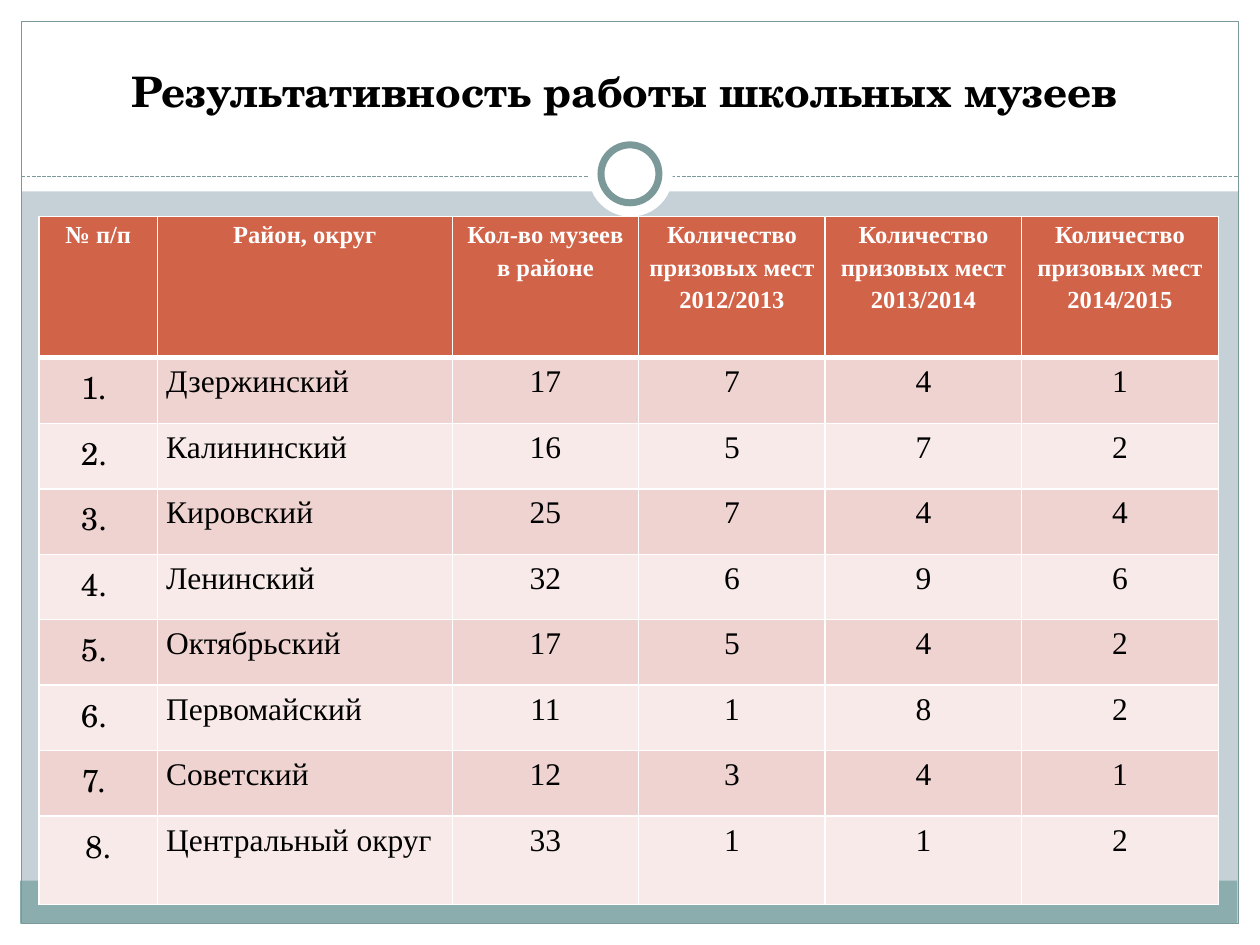
from lxml.etree import SubElement
from pptx import Presentation
from pptx.dml.color import RGBColor
from pptx.enum.dml import MSO_LINE_DASH_STYLE as Dash
from pptx.enum.shapes import MSO_CONNECTOR as Connector, MSO_SHAPE as Shape
from pptx.enum.text import MSO_AUTO_SIZE as AutoSize, PP_ALIGN as Align
from pptx.oxml.ns import qn
from pptx.util import Inches, Pt

COLORS = {
    "background": "C5D1D7", "white": "FFFFFF", "black": "000000", "band": "8CADAE",
    "frame": "7C999A", "header": "D16349", "odd": "EED3D0", "even": "F7EAE9",
}
SERIF, SCHOOL = "Times New Roman", "TeX Gyre Schola"
HEADER_FORMAT = {"size": Pt(14), "name": SERIF, "bold": True}
BODY_FORMAT = {"size": Pt(18), "name": SERIF, "bold": False}
NUMBER_FORMAT = {**BODY_FORMAT, "name": SCHOOL}
TITLE_FORMAT = {"size": Pt(24), "name": SCHOOL, "bold": True}
CELL_MARGINS = {"margin_left": Inches(0.07), "margin_right": Inches(0.07),
                "margin_top": 0, "margin_bottom": 0}
COLUMN_WIDTHS = [0.94, 2.34, 1.48, 1.48, 1.56, 1.56]
ROW_HEIGHTS = [1.12] + [0.52] * 7 + [0.7]
YEARS = ["2012/2013", "2013/2014", "2014/2015"]
HEADERS = ["№ п/п", "Район, округ", "Кол-во музеев в районе"] + [
    f"Количество призовых мест\n{year}" for year in YEARS]
DISTRICTS = [
    ("1. ", "Дзержинский", 17, 7, 4, 1),
    ("2. ", "Калининский", 16, 5, 7, 2),
    ("3. ", "Кировский", 25, 7, 4, 4),
    ("4. ", "Ленинский", 32, 6, 9, 6),
    ("5. ", "Октябрьский", 17, 5, 4, 2),
    ("6. ", "Первомайский", 11, 1, 8, 2),
    ("7. ", "Советский", 12, 3, 4, 1),
    ("8.", "Центральный округ", 33, 1, 1, 2),
]


def color(name):
    """Return the palette colour with this name."""
    return RGBColor.from_string(COLORS[name])


def set_values(target, values):
    """Set each attribute of the target from a dict."""
    for name, value in values.items():
        setattr(target, name, value)


def format_text(text_frame, text, values, font_color, **paragraph_values):
    """Write the text and format all its paragraphs and runs."""
    text_frame.text = text
    for paragraph in text_frame.paragraphs:
        set_values(paragraph, paragraph_values)
        for run in paragraph.runs:
            set_values(run.font, values)
            run.font.color.rgb = color(font_color)


def add_panel(slide, kind, box, fill=None, line=None, width=0.75):
    """Add a plain shape with an optional fill and outline."""
    shape = slide.shapes.add_shape(kind, *map(Inches, box))
    shape.shadow.inherit = False
    if fill:
        shape.fill.solid()
        shape.fill.fore_color.rgb = color(fill)
    else:
        shape.fill.background()
    if line:
        shape.line.color.rgb = color(line)
        shape.line.width = Pt(width)
    else:
        shape.line.fill.background()


def add_dashed_rule(slide, left, right, top):
    """Add the dashed horizontal rule under the title."""
    rule = slide.shapes.add_connector(
        Connector.STRAIGHT, Inches(left), Inches(top), Inches(right), Inches(top))
    set_values(rule.line, {"width": Pt(0.75), "dash_style": Dash.SQUARE_DOT})
    rule.line.color.rgb = color("frame")
    SubElement(rule.element.spPr, qn("a:effectLst"))


def add_frame(slide):
    """Add the margins, frame, rule and ring around the content."""
    for box in [(0, 7.33, 10, 0.17), (0, 0, 10, 1.52),
                (0, 0, 0.17, 7.5), (9.83, 0, 0.17, 7.5)]:
        add_panel(slide, Shape.RECTANGLE, box, "white")
    add_panel(slide, Shape.RECTANGLE, (0.16, 6.99, 9.66, 0.34), "band")
    add_panel(slide, Shape.RECTANGLE, (0.17, 0.17, 9.66, 7.16), line="frame")
    add_dashed_rule(slide, 0.17, 9.83, 1.4)
    add_panel(slide, Shape.OVAL, (4.67, 1.05, 0.67, 0.67), "white")
    add_panel(slide, Shape.OVAL, (4.77, 1.15, 0.46, 0.46), "white", "frame", 4)


def style_cell(cell, fill, top=1, bottom=1):
    """Give a cell white borders and a solid fill."""
    properties = cell._tc.get_or_add_tcPr()
    for side, width in {"L": 1, "R": 1, "T": top, "B": bottom}.items():
        border = SubElement(properties, qn(f"a:ln{side}"), w=str(Pt(width)))
        solid = SubElement(border, qn("a:solidFill"))
        SubElement(solid, qn("a:srgbClr"), val=COLORS["white"])
    cell.fill.solid()
    cell.fill.fore_color.rgb = color(fill)


def fill_header(table):
    """Fill the header row."""
    for cell, text in zip(table.rows[0].cells, HEADERS):
        style_cell(cell, "header", bottom=3)
        set_values(cell, CELL_MARGINS)
        format_text(cell.text_frame, text, HEADER_FORMAT, "white",
                    alignment=Align.CENTER, line_spacing=1.2)


def fill_district(table, index, values):
    """Fill one district row."""
    for column, value in enumerate(values):
        cell = table.cell(index, column)
        style_cell(cell, "odd" if index % 2 else "even", top=3 if index == 1 else 1)
        if column == 0:
            format_text(cell.text_frame, value, NUMBER_FORMAT, "black",
                        alignment=Align.CENTER)
            continue
        set_values(cell, CELL_MARGINS)
        format_text(cell.text_frame, str(value), BODY_FORMAT, "black", line_spacing=1.2,
                    alignment=Align.JUSTIFY if column == 1 else Align.CENTER)


def add_results_table(slide):
    """Add the table of museums and prizes by district."""
    box = (0.31, 1.72, sum(COLUMN_WIDTHS), sum(ROW_HEIGHTS))
    table = slide.shapes.add_table(
        len(ROW_HEIGHTS), len(COLUMN_WIDTHS), *map(Inches, box)).table
    for column, width in zip(table.columns, COLUMN_WIDTHS):
        column.width = Inches(width)
    for row, height in zip(table.rows, ROW_HEIGHTS):
        row.height = Inches(height)
    fill_header(table)
    for index, values in enumerate(DISTRICTS, 1):
        fill_district(table, index, values)


def place_title(slide, text):
    """Format the title placeholder and bring it to the front."""
    title = slide.shapes.title
    set_values(title, {"left": Inches(0.94), "top": Inches(0.47),
                       "width": Inches(8.2), "height": Inches(0.5)})
    set_values(title.text_frame, {"word_wrap": True, "auto_size": AutoSize.NONE})
    format_text(title.text_frame, text, TITLE_FORMAT, "black", alignment=Align.LEFT)
    slide.shapes.element.append(title.element)


def main():
    """Build and save the presentation."""
    presentation = Presentation()
    set_values(presentation, {"slide_width": Inches(10), "slide_height": Inches(7.5)})
    slide = presentation.slides.add_slide(presentation.slide_layouts[5])
    slide.background.fill.solid()
    slide.background.fill.fore_color.rgb = color("background")
    add_frame(slide)
    add_results_table(slide)
    place_title(slide, "Результативность работы школьных музеев")
    presentation.save("out.pptx")


if __name__ == "__main__":
    main()
